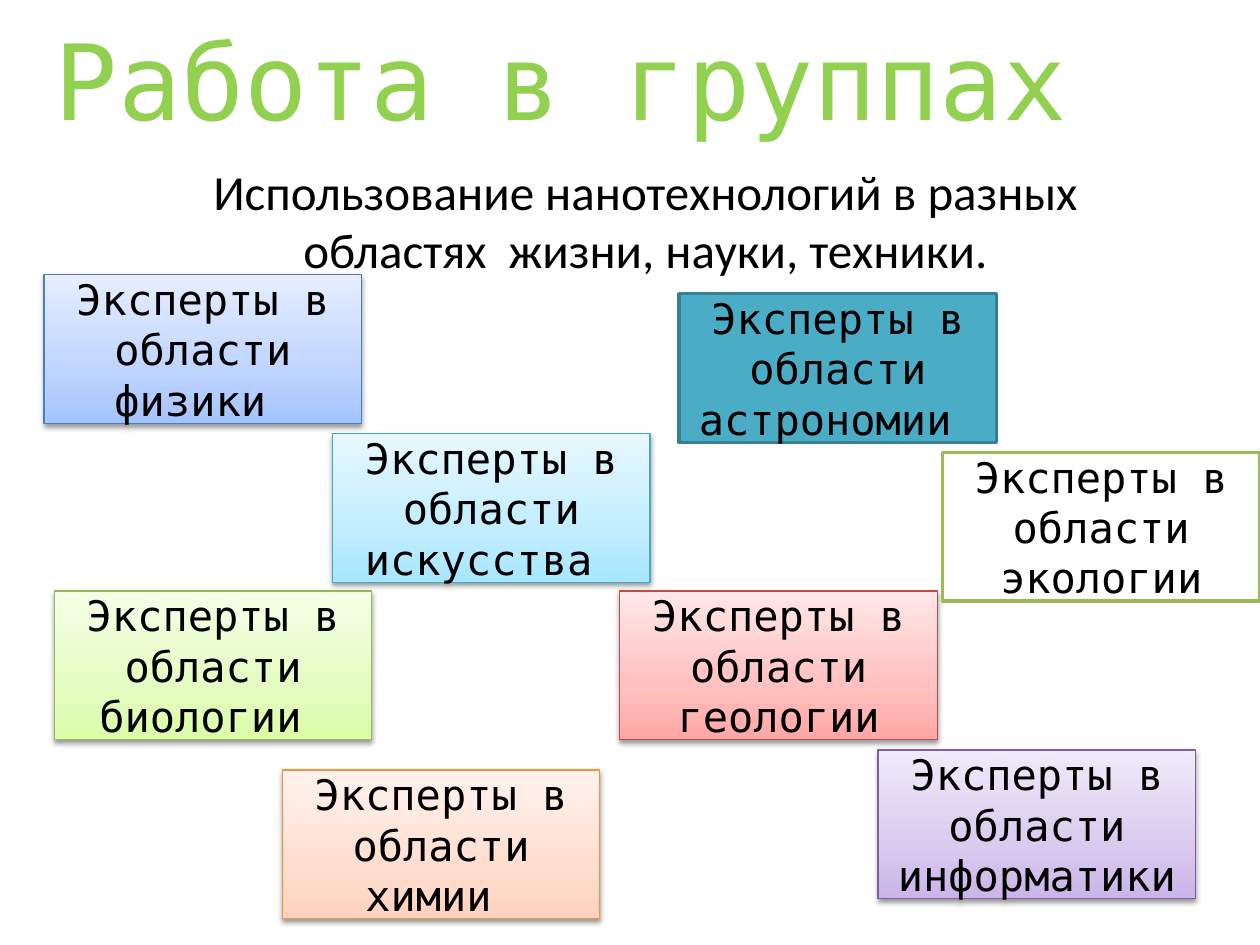
from copy import deepcopy

from lxml.etree import SubElement
from pptx import Presentation
from pptx.dml.color import RGBColor
from pptx.enum.shapes import MSO_SHAPE as Shape
from pptx.enum.text import MSO_ANCHOR as Anchor, MSO_AUTO_SIZE as AutoSize, PP_ALIGN as Align
from pptx.oxml.ns import qn
from pptx.util import Pt

BLACK = RGBColor(0x00, 0x00, 0x00)
TITLE_GREEN = RGBColor(0x92, 0xD0, 0x50)
MONO = "DejaVu Sans Mono"
TITLE_FONT = {"name": MONO, "size": Pt(60), "color": TITLE_GREEN}
SUBTITLE_FONT = {"name": "Calibri", "size": Pt(28), "color": BLACK}
CARD_FONT = {"name": MONO, "size": Pt(24), "color": BLACK}

CARD_SIZE = (181.5, 85)
GRADIENT_POSITIONS = (0, 0.35, 1)


def colors(*codes):
    return [RGBColor.from_string(code) for code in codes]


# field, left, top, outline, fill colours from bottom to top (one colour: solid)
CARDS = [
    ("физики ", 25.2, 157, *colors("4B7EBC"), colors("A4C4FF", "BFD4FF", "E6EEFF")),
    ("биологии ", 31, 337.7, *colors("98B955"), colors("DAFDA7", "E4FCC2", "F5FFE7")),
    ("химии ", 161.3, 440, *colors("F69240"), colors("FFD2BD", "FFDED0", "FFF2ED")),
    ("искусства ", 190, 247.7, *colors("46AAC5"), colors("A7E6FF", "C1EDFF", "E7F8FF")),
    ("информатики ", 501.8, 428.5, *colors("7D60A0"), colors("C9B5E8", "D8CBEE", "F0EAF9")),
    ("астрономии ", 388, 167.8, *colors("377F92"), colors("4BACC6")),
    ("геологии", 354.2, 337.7, *colors("BF4C48"), colors("FFA6A5", "FFC0BF", "FFE7E7")),
    ("экологии", 538.5, 258.5, *colors("9BBB59"), colors("FFFFFF")),
]


def write_text(shape, text, font_format):
    """Put one centred paragraph into the shape."""
    shape.text_frame.word_wrap = True
    paragraph = shape.text_frame.paragraphs[0]
    paragraph.alignment = Align.CENTER
    run = paragraph.add_run()
    run.text = text
    for name, value in font_format.items():
        if name == "color":
            run.font.color.rgb = value
        else:
            setattr(run.font, name, value)


def fill_gradient(shape, stop_colors):
    """Fill with a three-stop gradient that runs from bottom to top."""
    shape.fill.gradient()
    shape.fill.gradient_angle = 90
    stop_list = shape._element.spPr.find(qn("a:gradFill")).find(qn("a:gsLst"))
    stop_list.append(deepcopy(stop_list[-1]))
    for stop, position, color in zip(shape.fill.gradient_stops, GRADIENT_POSITIONS, stop_colors):
        stop.position = position
        stop.color.rgb = color


def add_drop_shadow(shape):
    effects = shape._element.spPr.find(qn("a:effectLst"))
    shadow = SubElement(effects, qn("a:outerShdw"), blurRad=str(Pt(3.1)), dist=str(Pt(1.6)),
                        dir="5400000", rotWithShape="0")
    color = SubElement(shadow, qn("a:srgbClr"), val=str(BLACK))
    SubElement(color, qn("a:alpha"), val="38000")


def place_title(slide, left, top, width, height):
    title = slide.shapes.title
    box = {"left": left, "top": top, "width": width, "height": height}
    for name, value in box.items():
        setattr(title, name, Pt(value))
    title.text_frame.vertical_anchor = Anchor.MIDDLE
    write_text(title, "Работа в группах ", TITLE_FONT)


def add_subtitle(slide, *box):
    subtitle = slide.shapes.add_textbox(*map(Pt, box))
    subtitle.text_frame.auto_size = AutoSize.SHAPE_TO_FIT_TEXT
    write_text(subtitle, "Использование нанотехнологий в разных областях  жизни, науки, техники.",
               SUBTITLE_FONT)


def add_expert_card(slide, field, left, top, outline, fill_colors):
    card = slide.shapes.add_shape(Shape.RECTANGLE, *map(Pt, (left, top, *CARD_SIZE)))
    card.shadow.inherit = False
    card.line.color.rgb = outline
    if len(fill_colors) == 1:
        card.fill.solid()
        card.fill.fore_color.rgb = fill_colors[0]
        card.line.width = Pt(2)
    else:
        fill_gradient(card, fill_colors)
        card.line.width = Pt(0.75)
        add_drop_shadow(card)
    card.text_frame.vertical_anchor = Anchor.MIDDLE
    write_text(card, f"Эксперты в области {field}", CARD_FONT)


def main():
    presentation = Presentation()
    presentation.slide_width, presentation.slide_height = Pt(720), Pt(540)
    slide = presentation.slides.add_slide(presentation.slide_layouts[5])
    place_title(slide, 14.4, 0, 648, 90)
    add_subtitle(slide, 88, 88.5, 561.5, 75)
    for card in CARDS:
        add_expert_card(slide, *card)
    presentation.save("out.pptx")


if __name__ == "__main__":
    main()
